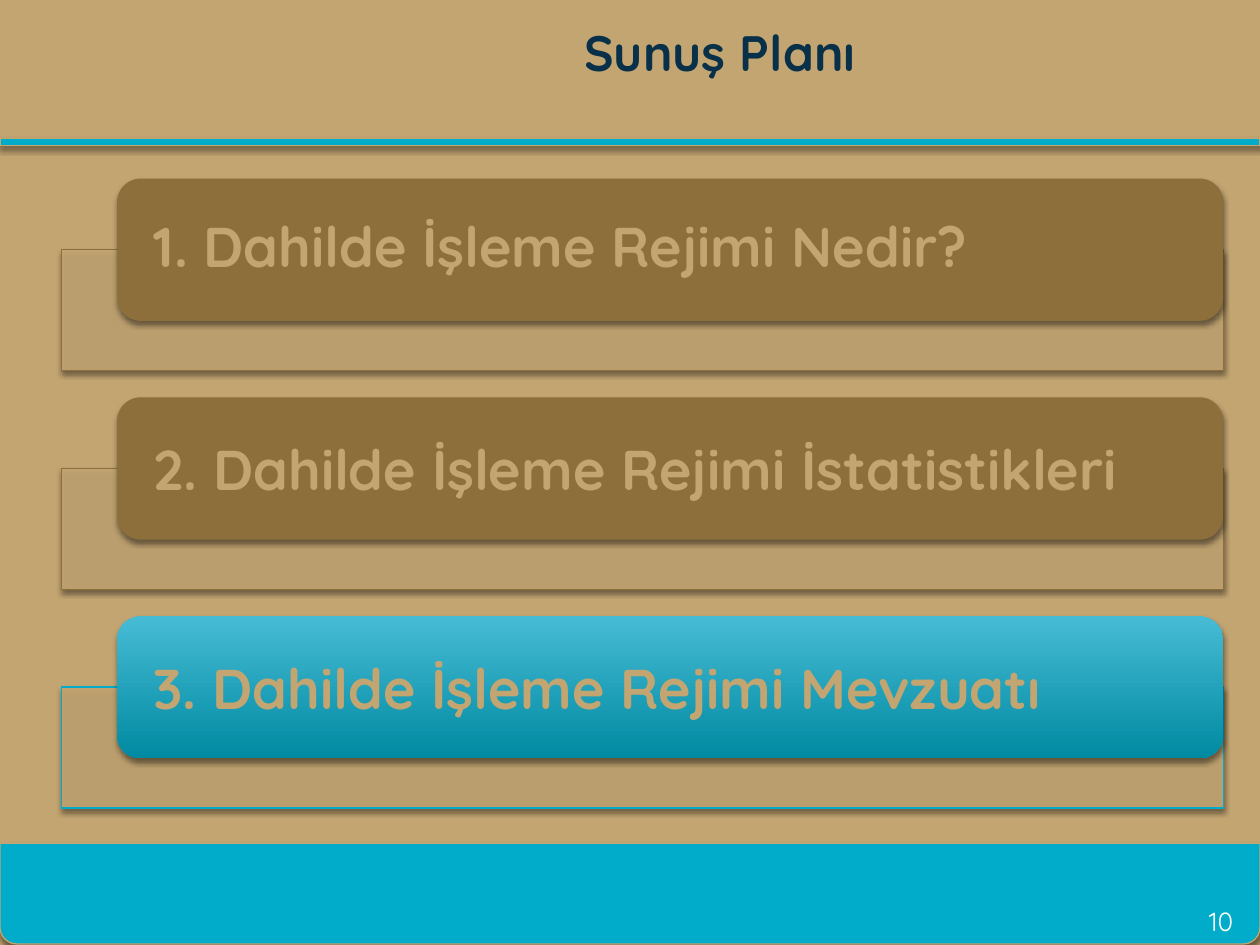
"""Build the agenda slide with three numbered section cards."""
from lxml.etree import SubElement
from pptx import Presentation
from pptx.dml.color import RGBColor
from pptx.enum.shapes import MSO_SHAPE as Shape
from pptx.enum.text import MSO_ANCHOR as Anchor, PP_ALIGN as Align
from pptx.oxml.ns import qn
from pptx.util import Cm, Pt

COLORS = {
    "sand": "C3A572",
    "brown": "8D6F3C",
    "cyan": "00ACC9",
    "light_cyan": "47BBD5",
    "deep_cyan": "008AA1",
    "navy": "083048",
    "white": "FFFFFF",
    "black": "000000",
}
FONT = "Quicksand"
FIRST_TOP, PITCH = 3.6, 4.41
SECTIONS = [
    ("1. Dahilde İşleme Rejimi Nedir?", ["brown"], "brown", 0.9),
    ("2. Dahilde İşleme Rejimi İstatistikleri", ["brown"], "brown", 1.0),
    ("3. Dahilde İşleme Rejimi Mevzuatı", ["light_cyan", "deep_cyan"], "cyan", 1.0),
]


def color(name):
    return RGBColor.from_string(COLORS[name])


def paint(fill, names):
    if len(names) == 1:
        fill.solid()
        fill.fore_color.rgb = color(names[0])
        return
    fill.gradient()
    fill.gradient_angle = 270
    for position, (stop, name) in enumerate(zip(fill.gradient_stops, names)):
        stop.position = position
        stop.color.rgb = color(name)


def cast_shadow(shape):
    shape.shadow.inherit = False
    effects = shape._element.spPr.find(qn("a:effectLst"))
    shadow = SubElement(effects, qn("a:outerShdw"), blurRad=str(Pt(3)),
                        dist=str(Pt(2)), dir="5400000", rotWithShape="0")
    tone = SubElement(shadow, qn("a:srgbClr"), val=COLORS["black"])
    SubElement(tone, qn("a:alpha"), val="45000")


def add_panel(page, kind, area, fills, line=None, alpha=None):
    panel = page.shapes.add_shape(kind, *map(Cm, area))
    paint(panel.fill, fills)
    if line:
        panel.line.color.rgb = color(line)
        panel.line.width = Pt(0.75)
    else:
        panel.line.fill.background()
    if alpha:
        tone = panel._element.spPr.find(qn("a:solidFill"))[0]
        SubElement(tone, qn("a:alpha"), val=str(alpha * 1000))
    cast_shadow(panel)
    return panel


def add_text(page, area, text, size, tone, bold=True, align=Align.CENTER,
             inset=0.25, spacing=1.0):
    frame = page.shapes.add_textbox(*map(Cm, area)).text_frame
    frame_format = {
        "word_wrap": True, "vertical_anchor": Anchor.MIDDLE,
        "margin_left": Cm(inset), "margin_right": Cm(inset),
        "margin_top": 0, "margin_bottom": 0,
    }
    for name, value in frame_format.items():
        setattr(frame, name, value)
    para = frame.paragraphs[0]
    para.alignment = align
    para.line_spacing = spacing
    span = para.add_run()
    span.text = text
    for name, value in {"name": FONT, "size": Pt(size), "bold": bold}.items():
        setattr(span.font, name, value)
    span.font.color.rgb = color(tone)


def add_section(page, top, text, fills, line, spacing):
    add_panel(page, Shape.RECTANGLE, (1.24, top + 1.43, 23.42, 2.44), ["sand"], line, 90)
    add_panel(page, Shape.ROUNDED_RECTANGLE, (2.36, top, 22.3, 2.87), fills)
    add_text(page, (2.49, top + 0.14, 22.02, 2.59), text, 32, "sand",
             align=Align.LEFT, inset=0.61, spacing=spacing)


def main():
    deck = Presentation()
    deck.slide_width, deck.slide_height = Cm(25.4), Cm(19.05)
    page = deck.slides.add_slide(deck.slide_layouts[6])
    paint(page.background.fill, ["sand"])
    footer = add_panel(page, Shape.ROUND_2_SAME_RECTANGLE, (0, 17, 25.4, 2.03),
                       ["cyan"], "sand")
    footer.rotation = 180
    add_panel(page, Shape.RECTANGLE, (0, 2.79, 25.4, 0.15), ["cyan"], "sand")
    add_text(page, (3.63, 0.38, 21.77, 1.32), "Sunuş Planı", 28.4, "navy")
    add_text(page, (23.83, 18.21, 1.57, 0.71), "10", 15, "white", bold=False)
    for index, section in enumerate(SECTIONS):
        add_section(page, FIRST_TOP + index * PITCH, *section)
    deck.save("out.pptx")


if __name__ == "__main__":
    main()
